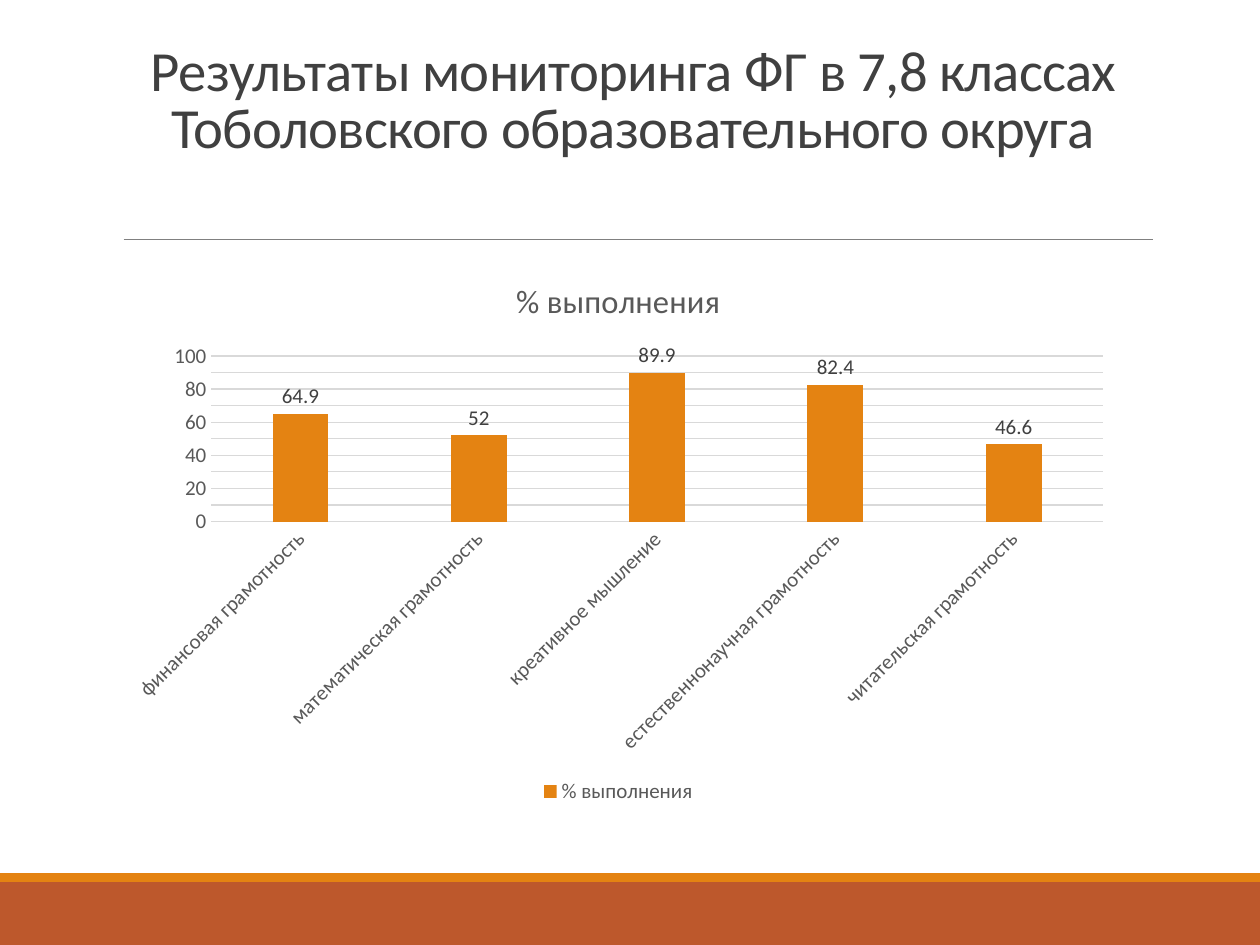
from copy import deepcopy
from lxml.etree import SubElement
from pptx import Presentation
from pptx.chart.data import CategoryChartData
from pptx.dml.color import RGBColor
from pptx.enum.chart import XL_CHART_TYPE, XL_LABEL_POSITION, XL_LEGEND_POSITION, XL_TICK_MARK
from pptx.enum.shapes import MSO_CONNECTOR, MSO_SHAPE
from pptx.enum.text import MSO_ANCHOR, PP_ALIGN
from pptx.oxml.ns import qn
from pptx.util import Cm, Pt

COLORS = {
    "rust": "BD582C",
    "orange": "E48312",
    "rule": "808080",
    "dark": "404040",
    "text": "595959",
    "grid": "D9D9D9",
}
FACE = "Calibri"
NAME = "% выполнения"
SCORES = {
    "финансовая грамотность": 64.9,
    "математическая грамотность": 52,
    "креативное мышление": 89.9,
    "естественнонаучная грамотность": 82.4,
    "читательская грамотность": 46.6,
}


def tint(name):
    return RGBColor.from_string(COLORS[name])


def style(font, size, color):
    font.name = FACE
    font.size = Pt(size)
    font.bold = False
    font.color.rgb = tint(color)


def stroke(line, color, width):
    line.color.rgb = tint(color)
    line.width = Pt(width)


def add_footer(slide, left, top, width, height):
    strip = 0.18
    bands = [("rust", strip, height - strip), ("orange", 0, strip)]
    for color, drop, depth in bands:
        band = slide.shapes.add_shape(
            MSO_SHAPE.RECTANGLE, Cm(left), Cm(top + drop), Cm(width), Cm(depth))
        band.shadow.inherit = False
        band.fill.solid()
        band.fill.fore_color.rgb = tint(color)
        band.line.fill.background()


def add_header(slide, left, top, width, height):
    box = slide.shapes.add_textbox(Cm(left), Cm(top), Cm(width), Cm(height))
    frame = box.text_frame
    frame.word_wrap = True
    frame.vertical_anchor = MSO_ANCHOR.BOTTOM
    para = frame.paragraphs[0]
    para.alignment = PP_ALIGN.CENTER
    para.line_spacing = 0.85
    run = para.add_run()
    run.text = "Результаты мониторинга ФГ в 7,8 классах Тоболовского образовательного округа"
    style(para.font, 32.4, "dark")
    run.font._element.set("spc", "-40")

    level = Cm(top + height + 1.47)
    rule = slide.shapes.add_connector(
        MSO_CONNECTOR.STRAIGHT, Cm(left + 0.2), level, Cm(left + width), level)
    stroke(rule.line, "rule", 0.5)
    SubElement(rule._element.spPr, qn("a:effectLst"))


def add_graph(slide, left, top, width, height):
    data = CategoryChartData()
    data.categories = list(SCORES)
    data.add_series(NAME, list(SCORES.values()))
    chart = slide.shapes.add_chart(
        XL_CHART_TYPE.COLUMN_CLUSTERED,
        Cm(left), Cm(top), Cm(width), Cm(height), data).chart
    chart.font.name = FACE
    chart.font.size = Pt(10)

    chart.has_title = True
    title = chart.chart_title.text_frame
    title.text = NAME
    style(title.paragraphs[0].font, 18.6, "text")

    chart.has_legend = True
    chart.legend.position = XL_LEGEND_POSITION.BOTTOM
    chart.legend.include_in_layout = False
    style(chart.legend.font, 12, "text")

    plot = chart.plots[0]
    plot.gap_width = 219
    plot.overlap = -27
    plot.vary_by_categories = False
    bars = plot.series[0]
    bars.format.fill.solid()
    bars.format.fill.fore_color.rgb = tint("orange")
    labels = bars.data_labels
    labels.show_value = True
    labels.position = XL_LABEL_POSITION.OUTSIDE_END
    style(labels.font, 12, "dark")

    for axis in (chart.category_axis, chart.value_axis):
        axis.major_tick_mark = XL_TICK_MARK.NONE
        axis.minor_tick_mark = XL_TICK_MARK.NONE
        style(axis.tick_labels.font, 12, "text")

    groups = chart.category_axis
    stroke(groups.format.line, "grid", 0.75)
    body = groups._element.find(qn("c:txPr")).find(qn("a:bodyPr"))
    body.set("rot", "-2700000")
    body.set("vert", "horz")

    scale = chart.value_axis
    scale.minimum_scale = 0
    scale.maximum_scale = 100
    scale.major_unit = 20
    scale.minor_unit = 10
    scale.format.line.fill.background()
    scale.has_major_gridlines = True
    scale.has_minor_gridlines = True
    stroke(scale.major_gridlines.format.line, "grid", 0.75)
    major = scale._element.find(qn("c:majorGridlines"))
    minor = scale._element.find(qn("c:minorGridlines"))
    minor.append(deepcopy(major.find(qn("c:spPr"))))


def main():
    deck = Presentation()
    deck.slide_width = Cm(25.4)
    deck.slide_height = Cm(19.05)
    slide = deck.slides.add_slide(deck.slide_layouts[6])
    add_footer(slide, 0, 17.6, 25.4, 1.45)
    add_header(slide, 2.29, 0.79, 20.96, 2.57)
    add_graph(slide, 2.29, 5.13, 20.35, 11.18)
    deck.save("out.pptx")


if __name__ == "__main__":
    main()
